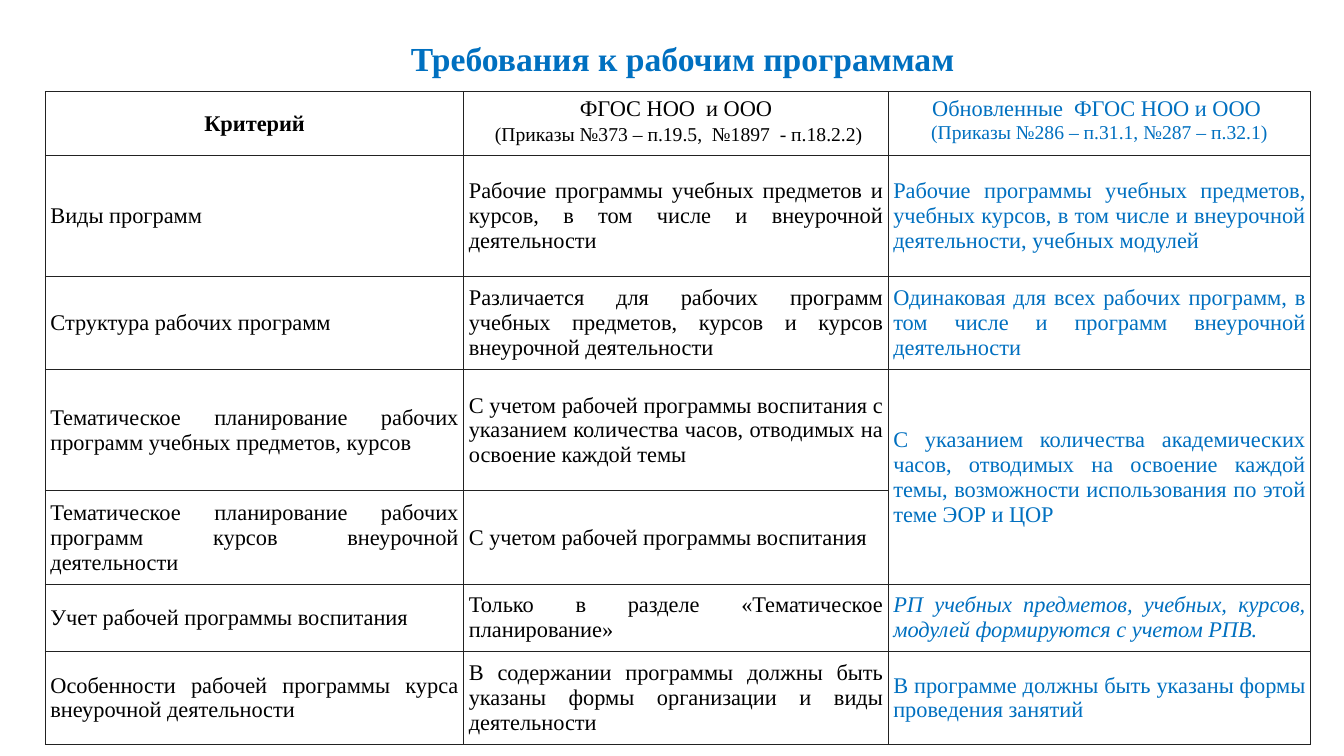
import pptx
import pptx.util
import pptx.dml.color
import pptx.enum.text
import pptx.oxml
import pptx.oxml.ns

Inches = pptx.util.Inches
ALIGN = pptx.enum.text.PP_ALIGN
ANCHOR = pptx.enum.text.MSO_ANCHOR

COLORS = {"text": "000000", "accent": "0070C0", "border": "222222", "paper": "FFFFFF"}

COLUMN_WIDTHS = [4.15, 4.21, 4.19]
ROW_HEIGHTS = [0.63, 1.2, 0.93, 1.2, 0.93, 0.66, 0.93]
HEADER = [
    [[("Критерий", 16)]],
    [[("ФГОС НОО  и ООО", 16)],
     [(" ", 16), ("(Приказы №373 – п.19.5,  №1897  - п.18.2.2)", 14)]],
    [[("Обновленные  ФГОС НОО и ООО ", 16)],
     [("(Приказы №286 – п.31.1, №287 – п.32.1)", 14)]],
]
CRITERIA = [
    ["Виды программ",
     "Рабочие программы учебных предметов и курсов, в том числе и внеурочной деятельности",
     "Рабочие программы учебных предметов, учебных курсов, в том числе и внеурочной деятельности, учебных модулей"],
    ["Структура рабочих программ",
     "Различается для рабочих программ учебных предметов, курсов и курсов внеурочной деятельности",
     "Одинаковая для всех рабочих программ, в том числе и программ внеурочной деятельности"],
    ["Тематическое планирование рабочих программ учебных предметов, курсов",
     "С учетом рабочей программы воспитания с указанием количества часов, отводимых на освоение каждой темы",
     "С указанием количества академических часов, отводимых на освоение каждой темы, возможности использования по этой теме ЭОР и ЦОР"],
    ["Тематическое планирование рабочих программ курсов внеурочной деятельности",
     "С учетом рабочей программы воспитания",
     None],
    ["Учет рабочей программы воспитания",
     "Только в разделе «Тематическое планирование»",
     "РП учебных предметов, учебных, курсов, модулей формируются с учетом РПВ."],
    ["Особенности рабочей программы курса внеурочной деятельности",
     "В содержании программы должны быть указаны формы организации и виды деятельности",
     "В программе должны быть указаны формы проведения занятий"],
]
ITALIC_ROW = 5


class SlideBuilder:
    font = "Times New Roman"

    def __init__(self, slide):
        self.s = slide

    def style(self, r, size, color, bold=False, italic=False):
        r.font.name = self.font
        r.font.size = pptx.util.Pt(size)
        r.font.bold = bold
        r.font.italic = italic
        r.font.color.rgb = pptx.dml.color.RGBColor.from_string(COLORS[color])

    def title(self, text, left, top, width, height):
        sp = self.s.shapes.title
        sp.left, sp.top = Inches(left), Inches(top)
        sp.width, sp.height = Inches(width), Inches(height)
        tf = sp.text_frame
        tf.text = text
        tf.vertical_anchor = ANCHOR.MIDDLE
        p = tf.paragraphs[0]
        p.alignment = ALIGN.CENTER
        self.style(p.runs[0], 24, "accent", bold=True)

    def table(self, left, top, widths, heights):
        sp = self.s.shapes.add_table(
            len(heights), len(widths), Inches(left), Inches(top),
            Inches(sum(widths)), Inches(sum(heights)))
        table = sp.table
        table.first_row = table.horz_banding = False
        for column, width in zip(table.columns, widths):
            column.width = Inches(width)
        for row, height in zip(table.rows, heights):
            row.height = Inches(height)
        for cell in table.iter_cells():
            self.frame(cell)
        return table

    def frame(self, cell):
        tcPr = cell._tc.get_or_add_tcPr()
        for side in ("lnL", "lnR", "lnT", "lnB"):
            tcPr.append(pptx.oxml.parse_xml(
                f'<a:{side} {pptx.oxml.ns.nsdecls("a")} w="12700"><a:solidFill>'
                f'<a:srgbClr val="{COLORS["border"]}"/></a:solidFill></a:{side}>'))
        cell.fill.solid()
        cell.fill.fore_color.rgb = pptx.dml.color.RGBColor.from_string(COLORS["paper"])

    def cell(self, cell, paragraphs, align, color, middle=True, bold=False, italic=False):
        cell.vertical_anchor = ANCHOR.MIDDLE if middle else ANCHOR.TOP
        cell.margin_top = cell.margin_bottom = Inches(0.05)
        cell.margin_left = cell.margin_right = Inches(0.05 if middle else 0.1)
        tf = cell.text_frame
        for i, runs in enumerate(paragraphs):
            p = tf.add_paragraph() if i else tf.paragraphs[0]
            p.alignment = align
            for text, size in runs:
                r = p.add_run()
                r.text = text
                self.style(r, size, color, bold, italic)


def main():
    prs = pptx.Presentation()
    prs.slide_width, prs.slide_height = Inches(13.33), Inches(7.5)
    b = SlideBuilder(prs.slides.add_slide(prs.slide_layouts[5]))
    b.title("Требования к рабочим программам", 1.47, 0.33, 10.6, 0.5)

    table = b.table(0.45, 0.91, COLUMN_WIDTHS, ROW_HEIGHTS)
    table.cell(3, 2).merge(table.cell(4, 2))
    column_colors = ["text", "text", "accent"]
    for col, paragraphs in enumerate(HEADER):
        b.cell(table.cell(0, col), paragraphs, ALIGN.CENTER, column_colors[col],
               middle=col == 0, bold=col == 0)
    for row, texts in enumerate(CRITERIA, start=1):
        for col, text in enumerate(texts):
            if text:
                b.cell(table.cell(row, col), [[(text, 16)]], ALIGN.JUSTIFY,
                       column_colors[col], italic=row == ITALIC_ROW and col == 2)

    prs.save("out.pptx")


if __name__ == "__main__":
    main()
